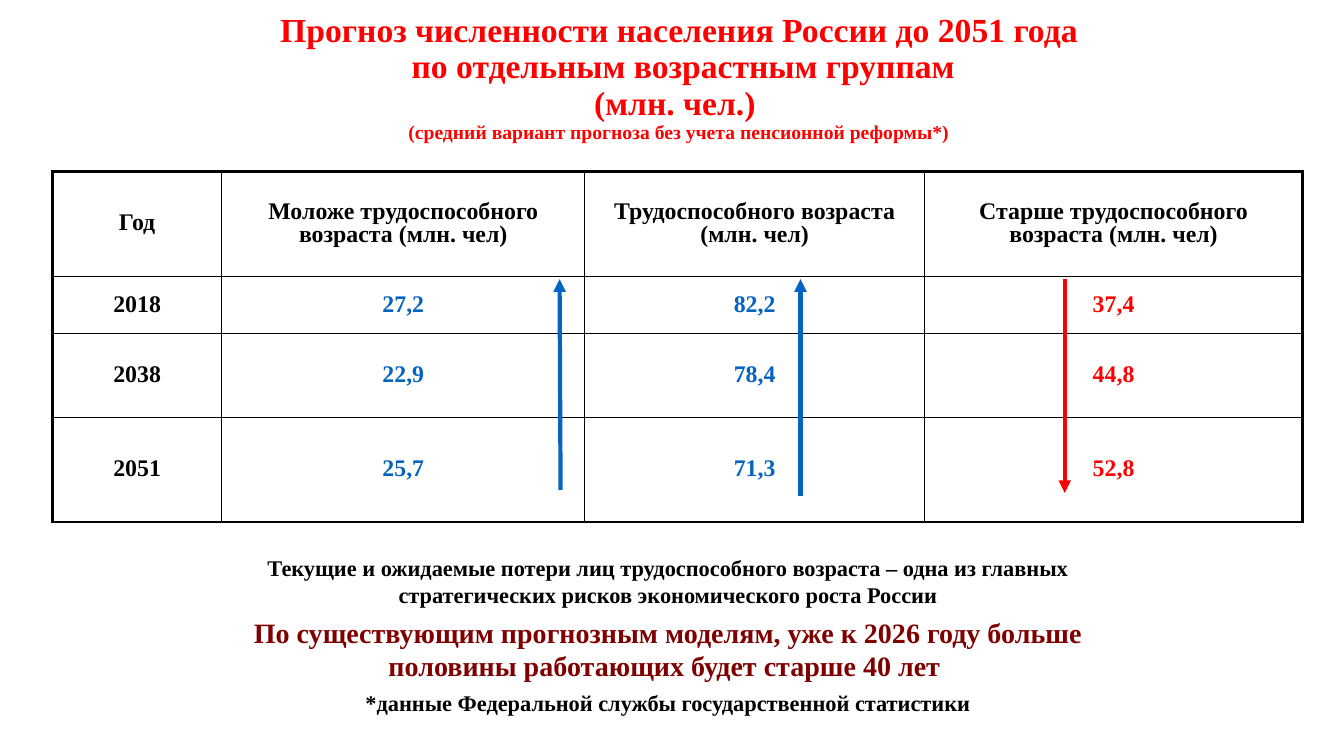
from lxml.etree import SubElement
from pptx import Presentation
from pptx.dml.color import RGBColor
from pptx.enum.shapes import MSO_CONNECTOR
from pptx.enum.text import MSO_ANCHOR, PP_ALIGN
from pptx.oxml.ns import qn
from pptx.util import Inches, Pt

BLACK, BLUE, RED, MAROON = "000000", "0563C1", "FF0000", "800000"
THIN, THICK = 1, 2.25

TITLE_LINES = (
    "Прогноз численности населения России до 2051 года\v"
    " по отдельным возрастным группам\v"
    "(млн. чел.) \v"
)
TITLE_NOTE = "(средний вариант прогноза без учета пенсионной реформы*)"
FORECAST = [
    ["Год", "Моложе трудоспособного возраста (млн. чел)",
     "Трудоспособного возраста (млн. чел)",
     "Старше трудоспособного возраста (млн. чел)"],
    ["2018", "27,2", "82,2", "37,4"],
    ["2038", "22,9", "78,4", "44,8"],
    ["2051", "25,7", "71,3", "52,8"],
]
VALUE_COLORS = [BLACK, BLUE, BLUE, RED]
COLUMN_WIDTHS = [1.68, 3.6, 3.37, 3.75]
ROW_HEIGHTS = [1.04, 0.57, 0.83, 1.04]
CONCLUSIONS = [
    ("Текущие и ожидаемые потери лиц трудоспособного возраста – одна из главных "
     "стратегических рисков экономического роста России", 16, BLACK),
    ("По существующим прогнозным моделям, уже к 2026 году больше "
     "половины работающих будет старше 40 лет ", 20, MAROON),
    ("*данные Федеральной службы государственной статистики", 16, BLACK),
]
TREND_ARROWS = [
    ((5.56, 4.86), (5.55, 2.77), BLUE),
    ((7.94, 4.92), (7.94, 2.77), BLUE),
    ((10.56, 2.77), (10.56, 4.89), RED),
]


def rgb(value):
    return RGBColor.from_string(value)


def write(paragraph, text, size, color, line_spacing=None, space_before=0):
    """Append centred bold text; vertical tabs become line breaks."""
    paragraph.alignment = PP_ALIGN.CENTER
    paragraph.line_spacing = line_spacing
    paragraph.space_before = Pt(space_before)
    for index, line in enumerate(text.split("\v")):
        if index:
            paragraph.add_line_break()
        if line:
            run = paragraph.add_run()
            run.text = line
            run.font.name = SlideBuilder.font
            run.font.size = Pt(size)
            run.font.bold = True
            run.font.color.rgb = rgb(color)


def set_border(cell, side, width):
    """Draw a black border on side L, R, T or B."""
    line = SubElement(cell._tc.get_or_add_tcPr(), qn(f"a:ln{side}"), w=str(Pt(width)))
    fill = SubElement(line, qn("a:solidFill"))
    SubElement(fill, qn("a:srgbClr"), val=BLACK)


class SlideBuilder:
    font = "Times New Roman"

    def __init__(self, slide):
        self.slide = slide

    def text_frame(self, left, top, width, height, anchor=MSO_ANCHOR.TOP):
        box = self.slide.shapes.add_textbox(
            Inches(left), Inches(top), Inches(width), Inches(height))
        frame = box.text_frame
        frame.word_wrap = True
        frame.vertical_anchor = anchor
        return frame

    def table(self, left, top, rows, column_widths, row_heights, colors):
        table = self.slide.shapes.add_table(
            len(rows), len(column_widths), Inches(left), Inches(top),
            Inches(sum(column_widths)), Inches(sum(row_heights))).table
        table.first_row = table.horz_banding = False
        for column, width in zip(table.columns, column_widths):
            column.width = Inches(width)
        for row, height in zip(table.rows, row_heights):
            row.height = Inches(height)
        last_row, last_column = len(rows) - 1, len(column_widths) - 1
        for r, texts in enumerate(rows):
            for c, text in enumerate(texts):
                cell = table.cell(r, c)
                cell.vertical_anchor = MSO_ANCHOR.MIDDLE
                write(cell.text_frame.paragraphs[0], text, 17,
                      colors[c] if r else BLACK, line_spacing=0.9, space_before=7.5)
                outer = {"L": c == 0, "R": c == last_column,
                         "T": r == 0, "B": r == last_row}
                for side, is_outer in outer.items():
                    set_border(cell, side, THICK if is_outer else THIN)
                cell.fill.background()

    def arrow(self, start, end, color):
        connector = self.slide.shapes.add_connector(
            MSO_CONNECTOR.STRAIGHT, *map(Inches, start + end))
        connector.line.color.rgb = rgb(color)
        connector.line.width = Pt(3)
        SubElement(connector.line._get_or_add_ln(), qn("a:tailEnd"), type="triangle")
        SubElement(connector._element.spPr, qn("a:effectLst"))


def main():
    presentation = Presentation()
    presentation.slide_width = Inches(13.33)
    presentation.slide_height = Inches(7.5)
    builder = SlideBuilder(presentation.slides.add_slide(presentation.slide_layouts[6]))

    title = builder.text_frame(2.05, 0.1, 9.37, 1.36, MSO_ANCHOR.MIDDLE).paragraphs[0]
    write(title, TITLE_LINES, 24, RED, line_spacing=0.9)
    write(title, TITLE_NOTE, 14, RED, line_spacing=0.9)

    builder.table(0.52, 1.7, FORECAST, COLUMN_WIDTHS, ROW_HEIGHTS, VALUE_COLORS)

    conclusions = builder.text_frame(2.19, 5.45, 8.87, 1.74)
    for index, (text, size, color) in enumerate(CONCLUSIONS):
        paragraph = conclusions.add_paragraph() if index else conclusions.paragraphs[0]
        write(paragraph, text, size, color, space_before=5)

    for start, end, color in TREND_ARROWS:
        builder.arrow(start, end, color)

    presentation.save("out.pptx")


if __name__ == "__main__":
    main()
